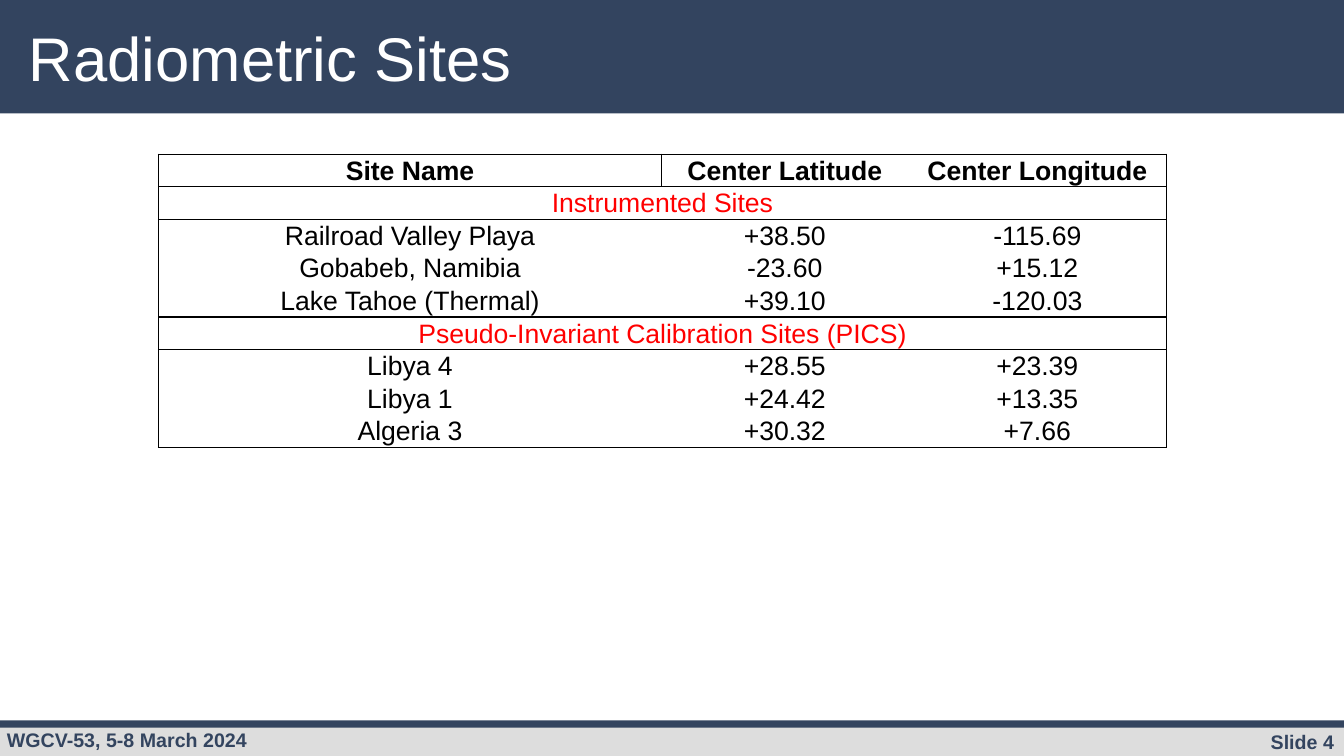
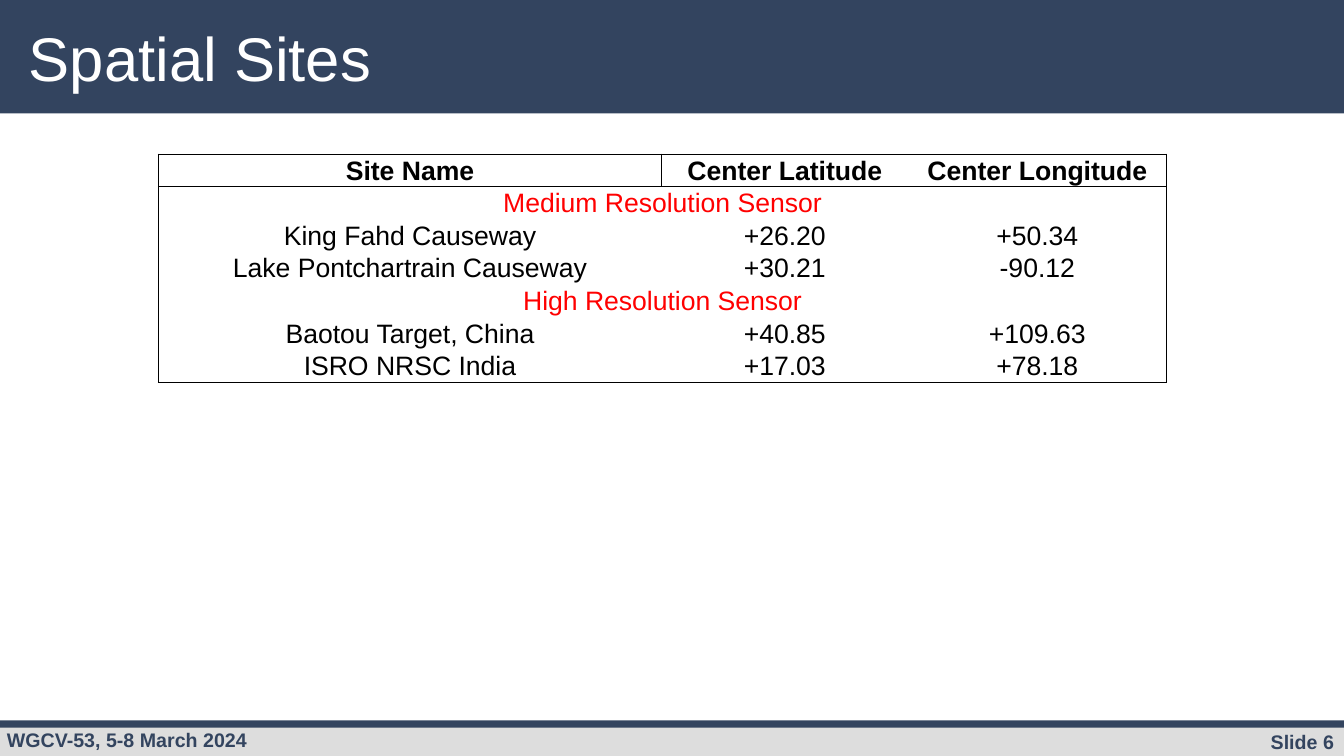
from lxml.etree import SubElement
from pptx import Presentation
from pptx.dml.color import RGBColor
from pptx.enum.shapes import MSO_SHAPE
from pptx.enum.text import MSO_ANCHOR, MSO_AUTO_SIZE, PP_ALIGN
from pptx.oxml.ns import qn
from pptx.util import Emu, Pt

COLORS = {
    "navy": "33445F",
    "grey": "DDDDDD",
    "white": "FFFFFF",
    "black": "000000",
    "red": "FF0000",
}
FONT = "Arial"
WIDTH, HEIGHT = 1280, 720
ROW_H = 31
COL_WIDTHS = (479, 235, 246)
HEADER = ("Site Name", "Center Latitude", "Center Longitude")


def px(n):
    return Emu(n * 9525)


def rgb(name):
    return RGBColor.from_string(COLORS[name])


def write(tf, text, size=14, color="navy", bold=False, align=PP_ALIGN.LEFT, spacing=None):
    p = tf.paragraphs[0]
    p.alignment = align
    if spacing:
        p.line_spacing = spacing
    r = p.add_run()
    r.text = text
    r.font.name, r.font.size, r.font.bold = FONT, Pt(size), bold
    r.font.color.rgb = rgb(color)


class Deck:
    def __init__(self):
        self.prs = Presentation()
        self.prs.slide_width, self.prs.slide_height = px(WIDTH), px(HEIGHT)
        self.s = None

    def slide(self, title, number):
        self.s = self.prs.slides.add_slide(self.prs.slide_layouts[5])
        # Bands and footer
        self.band(0, 108, "navy")
        self.band(690, 30, "grey")
        self.band(686, 7, "navy")
        self.label(1078, 690, 202, f"Slide {number}", align=PP_ALIGN.RIGHT)
        self.label(-3, 689, 517, "WGCV-53, 5-8 March 2024")
        self.title(title)

    def title(self, text):
        sp = self.s.shapes.title
        sp.left, sp.top, sp.width, sp.height = px(18), px(18), px(986), px(82)
        tf = sp.text_frame
        tf.auto_size = MSO_AUTO_SIZE.NONE
        tf.vertical_anchor = MSO_ANCHOR.MIDDLE
        write(tf, text, size=44, color="white", spacing=0.9)
        # Bring the title in front of the band
        sp.element.getparent().append(sp.element)

    def band(self, y, h, color):
        sp = self.s.shapes.add_shape(MSO_SHAPE.RECTANGLE, 0, px(y), px(WIDTH), px(h))
        sp.shadow.inherit = False
        sp.fill.solid()
        sp.fill.fore_color.rgb = rgb(color)
        sp.line.fill.background()

    def label(self, x, y, w, text, **fmt):
        sp = self.s.shapes.add_textbox(px(x), px(y), px(w), px(30))
        sp.text_frame.word_wrap = True
        write(sp.text_frame, text, bold=True, **fmt)

    def border(self, cell, **sides):
        tcPr = cell._tc.get_or_add_tcPr()
        for side, shown in sides.items():
            ln = SubElement(tcPr, qn(f"a:ln{side}"), w=str(Pt(1)))
            if shown:
                fill = SubElement(ln, qn("a:solidFill"))
                SubElement(fill, qn("a:srgbClr"), val=COLORS["black"])
            else:
                SubElement(ln, qn("a:noFill"))

    def site_table(self, rows, ruled_sections):
        """A row with a single text is a section heading across all columns."""
        rows = [HEADER, *rows]
        n, cols = len(rows), len(COL_WIDTHS)
        table = self.s.shapes.add_table(
            n, cols, px(151), px(147), px(sum(COL_WIDTHS)), px(ROW_H * n)).table
        table.first_row = table.horz_banding = False
        for column, w in zip(table.columns, COL_WIDTHS):
            column.width = px(w)

        def line_above(i):
            near_section = any(len(row) == 1 for row in rows[max(i - 1, 0):i + 1])
            return i in (0, 1, n) or (ruled_sections and near_section)

        def line_before(i, j):
            return j in (0, cols) or (i == 0 and j == 1)

        for i, texts in enumerate(rows):
            section = len(texts) == 1
            if section:
                table.cell(i, 0).merge(table.cell(i, cols - 1))
            for j, text in enumerate(texts):
                cell = table.cell(i, j)
                right = cols if section else j + 1
                self.border(cell, L=line_before(i, j), R=line_before(i, right),
                            T=line_above(i), B=line_above(i + 1))
                cell.fill.solid()
                cell.fill.fore_color.rgb = rgb("white")
                cell.margin_left = cell.margin_right = cell.margin_top = px(1)
                cell.margin_bottom = 0
                cell.vertical_anchor = MSO_ANCHOR.MIDDLE
                write(cell.text_frame, text, size=19, bold=i == 0,
                      color="red" if section else "black", align=PP_ALIGN.CENTER)


def main():
    deck = Deck()

    # Radiometric sites
    deck.slide("Radiometric Sites", 4)
    deck.site_table([
        ("Instrumented Sites",),
        ("Railroad Valley Playa", "+38.50", "-115.69"),
        ("Gobabeb, Namibia", "-23.60", "+15.12"),
        ("Lake Tahoe (Thermal)", "+39.10", "-120.03"),
        ("Pseudo-Invariant Calibration Sites (PICS)",),
        ("Libya 4", "+28.55", "+23.39"),
        ("Libya 1", "+24.42", "+13.35"),
        ("Algeria 3", "+30.32", "+7.66"),
    ], ruled_sections=True)

    # Spatial sites
    deck.slide("Spatial Sites", 6)
    deck.site_table([
        ("Medium Resolution Sensor",),
        ("King Fahd Causeway", "+26.20", "+50.34"),
        ("Lake Pontchartrain Causeway", "+30.21", "-90.12"),
        ("High Resolution Sensor",),
        ("Baotou Target, China", "+40.85", "+109.63"),
        ("ISRO NRSC India", "+17.03", "+78.18"),
    ], ruled_sections=False)

    deck.prs.save("out.pptx")


if __name__ == "__main__":
    main()
